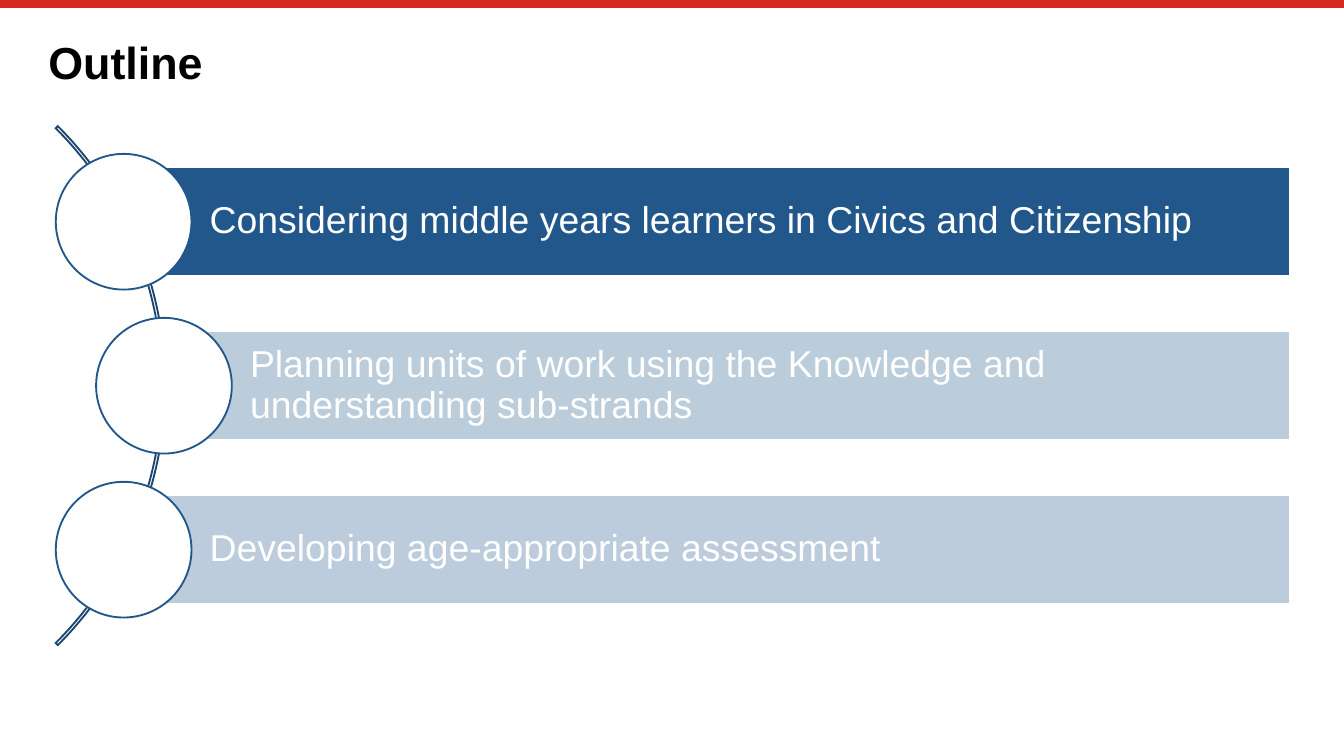
import pptx
import pptx.dml.color
import pptx.enum.shapes
import pptx.enum.text
import pptx.oxml
import pptx.oxml.ns
import pptx.util
from pptx.util import Inches

SHAPE = pptx.enum.shapes.MSO_SHAPE
BLUE, WHITE = "21578A", "FFFFFF"

# label, band colour, opacity in percent, left of the band
ITEMS = [
    ("Considering middle years learners in Civics and Citizenship", BLUE, 100, 0.92),
    ("Planning units of work using the Knowledge and understanding sub-strands", BLUE, 30, 1.22),
    ("Developing age-appropriate assessment", "BCCCDC", 100, 0.92),
]


def rgb(hex_color):
    return pptx.dml.color.RGBColor.from_string(hex_color)


def add_xml(parent, tag, attributes=""):
    parent.append(pptx.oxml.parse_xml(
        f'<a:{tag} {pptx.oxml.ns.nsdecls("a")} {attributes}/>'))


def add_shape(slide, kind, box, fill, line, opacity=100):
    """Add a preset shape; a fill of None leaves it hollow."""
    sp = slide.shapes.add_shape(kind, *map(Inches, box))
    sp.shadow.inherit = False
    if fill is None:
        sp.fill.background()
    else:
        sp.fill.solid()
        sp.fill.fore_color.rgb = rgb(fill)
    if opacity < 100:
        color = sp._element.spPr.find(".//" + pptx.oxml.ns.qn("a:srgbClr"))
        add_xml(color, "alpha", f'val="{opacity * 1000}"')
    sp.line.color.rgb = rgb(line)
    sp.line.width = pptx.util.Pt(1)
    add_xml(sp.line._get_or_add_ln(), "miter", 'lim="800000"')
    return sp


def set_text(sp, text, size, color, insets, anchor, bold=False):
    tf = sp.text_frame
    tf.word_wrap = True
    tf.vertical_anchor = anchor
    tf.margin_left, tf.margin_top, tf.margin_right, tf.margin_bottom = map(Inches, insets)
    tf.text = text
    p = tf.paragraphs[0]
    p.alignment = pptx.enum.text.PP_ALIGN.LEFT
    p.line_spacing = 0.9
    font = p.runs[0].font
    font.name, font.size, font.bold = "Arial", pptx.util.Pt(size), bold
    font.color.rgb = rgb(color)


def add_top_rule(slide, width, y):
    line = slide.shapes.add_connector(
        pptx.enum.shapes.MSO_CONNECTOR.STRAIGHT, 0, Inches(y), Inches(width), Inches(y))
    line.line.color.rgb = rgb("D52B1E")
    line.line.width = pptx.util.Pt(4.2)
    add_xml(line._element.spPr, "effectLst")


def add_title(slide, box, text):
    sp = slide.shapes.add_textbox(*map(Inches, box))
    set_text(sp, text, 24, "000000", (0, 0, 0, 0), pptx.enum.text.MSO_ANCHOR.TOP, bold=True)


def add_curved_list(slide, right, middle, items):
    """Draw bands ending at right, stacked about middle, with circles along an arc."""
    arc, band, circle, pitch = 5.46, 0.81, 1.01, 1.22
    sp = add_shape(slide, SHAPE.BLOCK_ARC, (-4.23, middle - arc / 2, arc, arc), None, "1A466F")
    # start and end angles (315 and 45 degrees), then ring thickness
    for i, value in enumerate((189, 27, 0.004)):
        sp.adjustments[i] = value
    for i, (label, color, opacity, left) in enumerate(items):
        y = middle + (i - (len(items) - 1) / 2) * pitch
        sp = add_shape(slide, SHAPE.RECTANGLE, (left, y - band / 2, right - left, band),
                       color, WHITE, opacity)
        set_text(sp, label, 20, WHITE, (0.64, 0.06, 0.06, 0.06),
                 pptx.enum.text.MSO_ANCHOR.MIDDLE)
        add_shape(slide, SHAPE.OVAL, (left - circle / 2, y - circle / 2, circle, circle),
                  WHITE, BLUE)


def main():
    prs = pptx.Presentation()
    prs.slide_width = Inches(10)
    prs.slide_height = prs.slide_width * 9 // 16
    slide = prs.slides.add_slide(prs.slide_layouts[6])
    add_top_rule(slide, 10, 0.03)
    add_title(slide, (0.36, 0.3, 9.29, 0.39), "Outline")
    add_curved_list(slide, 9.6, 2.87, ITEMS)
    prs.save("out.pptx")


if __name__ == "__main__":
    main()
